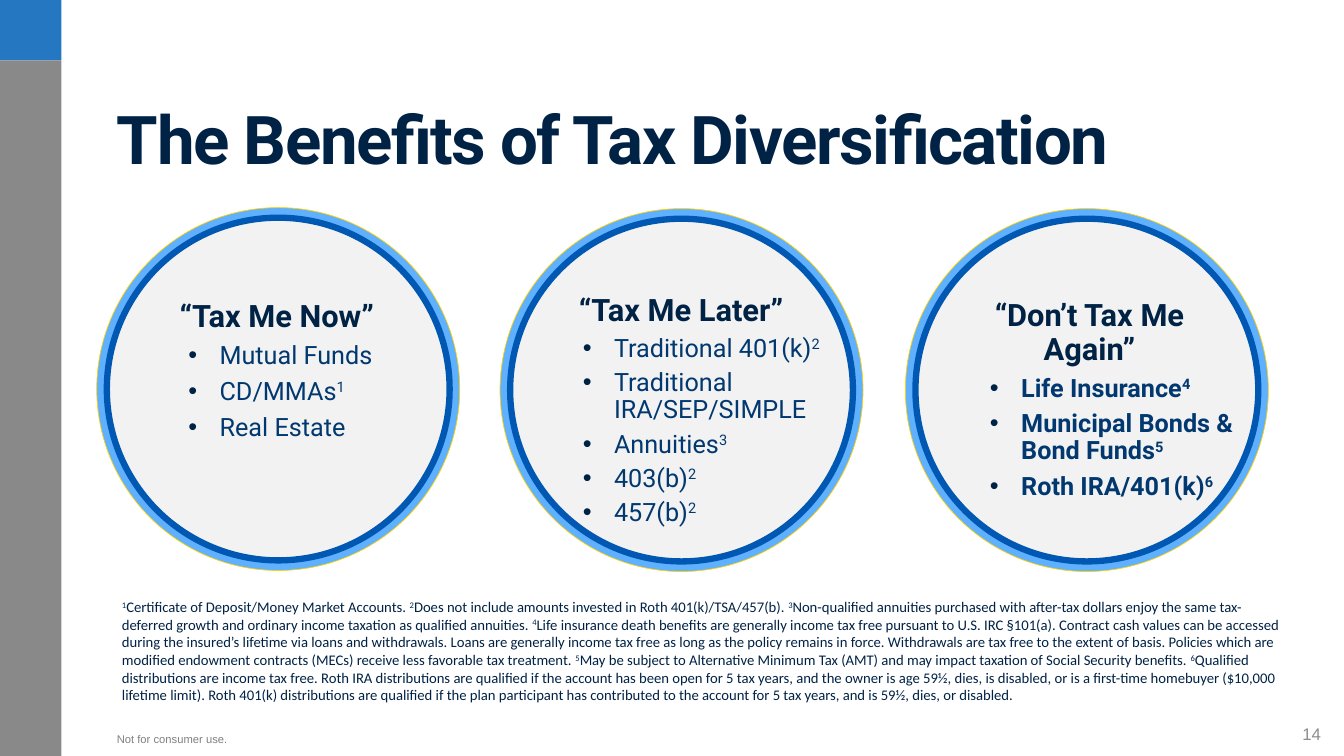
import pptx
import pptx.util
import pptx.dml.color
import pptx.enum.shapes
import pptx.enum.text
import pptx.oxml
import pptx.oxml.ns

Inches = pptx.util.Inches
Pt = pptx.util.Pt
Align = pptx.enum.text.PP_ALIGN
Anchor = pptx.enum.text.MSO_ANCHOR
Shape = pptx.enum.shapes.MSO_SHAPE

NAVY = "002245"
HEAD = {"name": "Roboto", "size": Pt(22), "bold": True}
ITEM = {"name": "Roboto", "size": Pt(18)}
NOTE = {"name": "Calibri", "size": Pt(10.5)}
RINGS = [
    {"box": (0.96, 2.06, 3.6, 3.6), "text": (1.33, 2.94, 2.83, 1.5),
     "pad": (0.1, 0.05), "gap": 6, "bold": False, "head": "“Tax Me Now”",
     "items": ["Mutual Funds", "CD/MMAs^1", "Real Estate"]},
    {"box": (4.96, 2.07, 3.6, 3.6), "text": (5.34, 2.93, 2.83, 2.32),
     "pad": (0, 0), "gap": 5, "bold": False, "head": "“Tax Me Later”",
     "items": ["Traditional 401(k)^2", "Traditional IRA/SEP/SIMPLE",
               "Annuities^3", "403(b)^2", "457(b)^2"]},
    {"box": (8.98, 2.07, 3.6, 3.6), "text": (9.28, 2.93, 3.05, 1.78),
     "pad": (0.1, 0.05), "gap": 6, "bold": True, "head": "“Don’t Tax Me Again”",
     "items": ["Life Insurance^4", "Municipal Bonds & Bond Funds^5",
               "Roth IRA/401(k)^6"]},
]
NOTES = [
    "^1Certificate of Deposit/Money Market Accounts.",
    "^2Does not include amounts invested in Roth 401(k)/TSA/457(b).",
    "^3Non-qualified annuities purchased with after-tax dollars enjoy the same "
    "tax-deferred growth and ordinary income taxation as qualified annuities.",
    "^4Life insurance death benefits are generally income tax free pursuant to "
    "U.S. IRC §101(a). Contract cash values can be accessed during the insured’s "
    "lifetime via loans and withdrawals. Loans are generally income tax free as "
    "long as the policy remains in force. Withdrawals are tax free to the extent "
    "of basis. Policies which are modified endowment contracts (MECs) receive "
    "less favorable tax treatment.",
    "^5May be subject to Alternative Minimum Tax (AMT) and may impact taxation of "
    "Social Security benefits.",
    "^6Qualified distributions are income tax free. Roth IRA distributions are "
    "qualified if the account has been open for 5 tax years, and the owner is age "
    "59½, dies, is disabled, or is a first-time homebuyer ($10,000 lifetime "
    "limit). Roth 401(k) distributions are qualified if the plan participant has "
    "contributed to the account for 5 tax years, and is 59½, dies, or disabled.",
]


def hue(code):
    return pptx.dml.color.RGBColor.from_string(code)


def apply(thing, values):
    for name, value in values.items():
        setattr(thing, name, value)


def place(box):
    return [Inches(n) for n in box]


def add_run(para, text, font, color):
    run = para.add_run()
    run.text = text
    apply(run.font, font)
    run.font.color.rgb = hue(color)
    return run


def write(para, text, font, color):
    first, *rest = text.split("^")
    if first:
        add_run(para, first, font, color)
    for part in rest:
        mark = add_run(para, part[0], font, color)
        mark.font._element.set("baseline", "30000")
        if part[1:]:
            add_run(para, part[1:], font, color)


def frame(slide, box, pad=(0.1, 0.05), anchor=Anchor.TOP):
    body = slide.shapes.add_textbox(*place(box)).text_frame
    side, edge = place(pad)
    apply(body, {"word_wrap": True, "vertical_anchor": anchor,
                 "margin_left": side, "margin_right": side,
                 "margin_top": edge, "margin_bottom": edge})
    return body


def draw(slide, kind, box, fill, line=None, width=0):
    shape = slide.shapes.add_shape(kind, *place(box))
    shape.shadow.inherit = False
    shape.fill.solid()
    shape.fill.fore_color.rgb = hue(fill)
    if line:
        shape.line.color.rgb = hue(line)
        shape.line.width = Pt(width)
    else:
        shape.line.fill.background()


def bullet(para):
    props = para._p.get_or_add_pPr()
    indent = {"marL": Inches(0.75), "indent": Inches(-0.31), "lvl": 1}
    for name, value in indent.items():
        props.set(name, str(int(value)))
    space = pptx.oxml.ns.nsdecls("a")
    for xml in (f'<a:buClr {space}><a:srgbClr val="{NAVY}"/></a:buClr>',
                f'<a:buFont {space} typeface="Arial"/>',
                f'<a:buChar {space} char="•"/>'):
        props.append(pptx.oxml.parse_xml(xml))


def side_bar(slide, box):
    left, top, width, height = box
    draw(slide, Shape.RECTANGLE, (left, top, width, 0.6), "2677C2")
    draw(slide, Shape.RECTANGLE, (left, top + 0.6, width, height - 0.6), "898989")


def title(slide, box):
    shape = slide.shapes.title
    apply(shape, dict(zip(("left", "top", "width", "height"), place(box))))
    body = shape.text_frame
    apply(body, {"word_wrap": True, "vertical_anchor": Anchor.TOP,
                 "auto_size": pptx.enum.text.MSO_AUTO_SIZE.NONE})
    para = body.paragraphs[0]
    apply(para, {"alignment": Align.LEFT, "line_spacing": 0.8})
    font = {"name": "Roboto", "size": Pt(48), "bold": True}
    run = add_run(para, "The Benefits of Tax Diversification", font, NAVY)
    run.font._element.set("spc", "-100")


def ring(slide, data):
    left, top, width, height = data["box"]
    draw(slide, Shape.OVAL, data["box"], "5FB0FF", "FFD200", 0.5)
    inner = (left + 0.1, top + 0.1, width - 0.2, height - 0.2)
    draw(slide, Shape.OVAL, inner, "F2F2F2", "0058B3", 4.5)
    body = frame(slide, data["text"], data["pad"])
    para = body.paragraphs[0]
    apply(para, {"alignment": Align.CENTER, "line_spacing": 0.9})
    write(para, data["head"], HEAD, NAVY)
    for item in data["items"]:
        para = body.add_paragraph()
        apply(para, {"line_spacing": 0.9, "space_before": Pt(data["gap"])})
        bullet(para)
        write(para, item, {**ITEM, "bold": data["bold"]}, "00386F")


def notes(slide, box):
    body = frame(slide, box, (0, 0.05), Anchor.BOTTOM)
    write(body.paragraphs[0], " ".join(NOTES), NOTE, NAVY)


def footer(slide, box, text, size, color, align):
    para = frame(slide, box, anchor=Anchor.MIDDLE).paragraphs[0]
    para.alignment = align
    write(para, text, {"name": "Arial", "size": Pt(size)}, color)


def main():
    deck = pptx.Presentation()
    apply(deck, {"slide_width": Inches(13.33), "slide_height": Inches(7.5)})
    slide = deck.slides.add_slide(deck.slide_layouts[5])
    side_bar(slide, (0, 0, 0.61, 7.5))
    title(slide, (1.06, 1.07, 11.5, 1.01))
    for data in RINGS:
        ring(slide, data)
    notes(slide, (1.21, 5.82, 11.5, 1.21))
    footer(slide, (1.06, 7.21, 9.75, 0.25), "Not for consumer use.", 8,
           "808080", Align.LEFT)
    footer(slide, (12.22, 7.08, 0.98, 0.4), "14", 12, "8C8D94", Align.RIGHT)
    deck.save("out.pptx")


if __name__ == "__main__":
    main()
